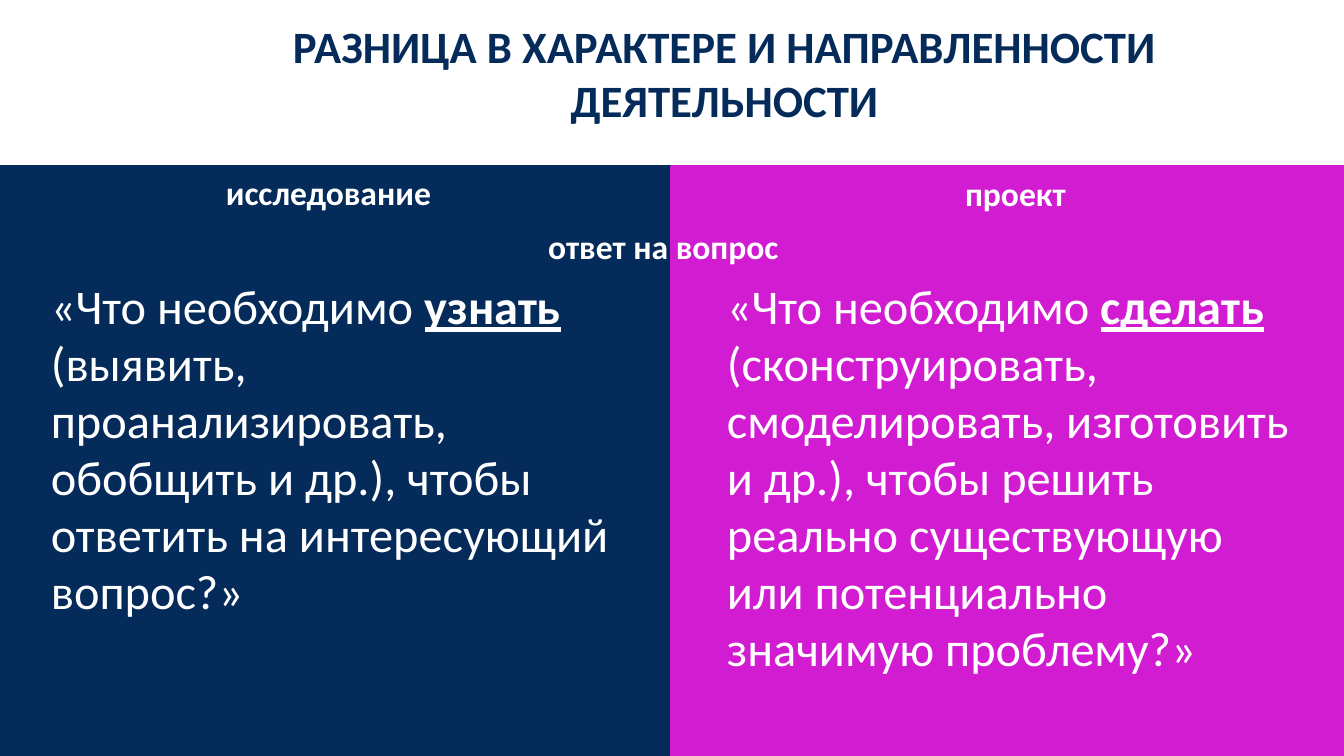
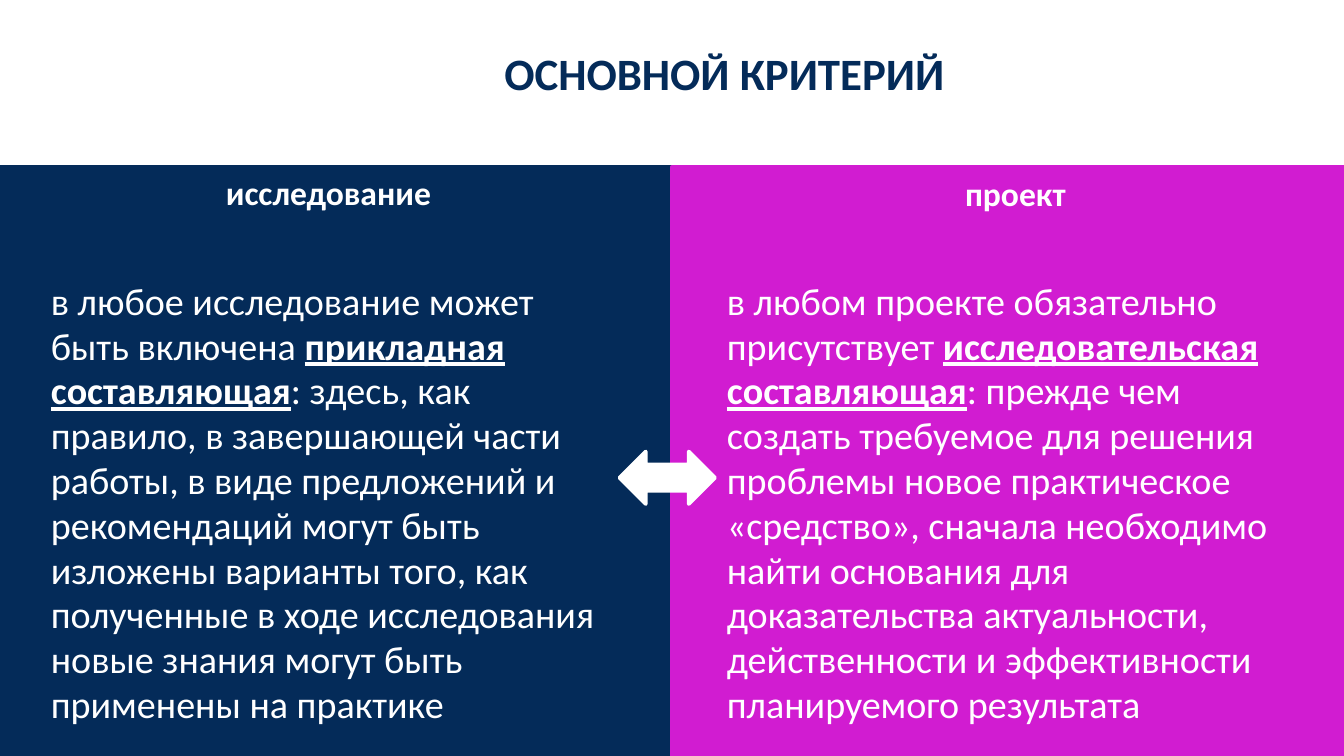
from dataclasses import dataclass
from typing import Optional

from pptx import Presentation
from pptx.dml.color import RGBColor
from pptx.enum import shapes as kinds, text as modes
from pptx.util import Inches, Pt


@dataclass(frozen=True)
class Theme:
    font: str = "Calibri"
    navy: str = "042B59"
    pink: str = "D11CD1"
    white: str = "FFFFFF"
    title: float = 24
    label: float = 18
    edge: float = 2


@dataclass(frozen=True)
class Box:
    left: float
    top: float
    width: float
    height: float

    def lengths(self) -> list:
        return [Inches(n) for n in (self.left, self.top, self.width, self.height)]


@dataclass(frozen=True)
class Side:
    name: str
    color: str
    panel: Box
    head: Box
    left: float


@dataclass(frozen=True)
class Claim:
    """Body text around one stressed phrase."""
    before: str
    stress: str
    after: str


@dataclass(frozen=True)
class Page:
    title: str
    size: float
    height: float
    claims: tuple
    link: Optional[str] = None


THEME = Theme()
TITLE = Box(1.06, 0.23, 8.66, 0.62)
LINK = Box(3.98, 1.63, 1.99, 0.4)
ARROW = Box(4.61, 3.36, 0.71, 0.39)
BODY_TOP, BODY_WIDTH = 2.03, 4.42
SPACING = 0.98

SIDES = (
    Side("исследование", THEME.navy, Box(0, 1.24, 5, 4.39), Box(0.28, 1.23, 4.33, 0.4), 0.28),
    Side("проект", THEME.pink, Box(5, 1.24, 5, 4.39), Box(5.39, 1.24, 4.33, 0.4), 5.31),
)

PAGES = (
    Page("РАЗНИЦА В ХАРАКТЕРЕ И НАПРАВЛЕННОСТИ ДЕЯТЕЛЬНОСТИ", 25.9, 3.39, (
        Claim("«Что необходимо ", "узнать",
              " (выявить, проанализировать, обобщить и др.), чтобы ответить на "
              "интересующий вопрос?»"),
        Claim("«Что необходимо ", "сделать",
              " (сконструировать, смоделировать, изготовить и др.), чтобы решить "
              "реально существующую или потенциально значимую проблему?»"),
    ), link="ответ на вопрос"),
    Page("ОСНОВНОЙ КРИТЕРИЙ", 20.4, 3.15, (
        Claim("в любое исследование может быть включена ", "прикладная составляющая",
              ": здесь, как правило, в завершающей части работы, в виде предложений и "
              "рекомендаций могут быть изложены варианты того, как полученные в ходе "
              "исследования новые знания могут быть применены на практике"),
        Claim("в любом проекте обязательно присутствует ", "исследовательская составляющая",
              ": прежде чем создать требуемое для решения проблемы новое практическое "
              "«средство», сначала необходимо найти основания для доказательства "
              "актуальности, действенности и эффективности планируемого результата"),
    )),
)


def apply(target, **values) -> None:
    for name, value in values.items():
        setattr(target, name, value)


def add_run(para, words: str, size: float, color: str, **style) -> None:
    run = para.add_run()
    run.text = words
    apply(run.font, name=THEME.font, size=Pt(size), **style)
    run.font.color.rgb = RGBColor.from_string(color)


def add_block(slide, kind, box: Box, color: str) -> None:
    block = slide.shapes.add_shape(kind, *box.lengths())
    block.shadow.inherit = False
    block.fill.solid()
    block.line.width = Pt(THEME.edge)
    for paint in (block.fill.fore_color, block.line.color):
        paint.rgb = RGBColor.from_string(color)


def add_title(slide, words: str) -> None:
    title = slide.shapes.title
    apply(title, **dict(zip(("left", "top", "width", "height"), TITLE.lengths())))
    apply(title.text_frame, word_wrap=True, auto_size=modes.MSO_AUTO_SIZE.NONE,
          vertical_anchor=modes.MSO_ANCHOR.MIDDLE)
    para = title.text_frame.paragraphs[0]
    para.alignment = modes.PP_ALIGN.CENTER
    add_run(para, words, THEME.title, THEME.navy, bold=True)


def add_text(slide, box: Box, wrap: bool = True):
    """Add an empty text box and return its first paragraph."""
    frame = slide.shapes.add_textbox(*box.lengths()).text_frame
    frame.word_wrap = wrap
    return frame.paragraphs[0]


def add_label(slide, box: Box, words: str, wrap: bool = True) -> None:
    para = add_text(slide, box, wrap)
    para.alignment = modes.PP_ALIGN.CENTER if wrap else modes.PP_ALIGN.LEFT
    add_run(para, words, THEME.label, THEME.white, bold=True)


def add_claim(slide, box: Box, claim: Claim, size: float) -> None:
    para = add_text(slide, box)
    para.line_spacing = SPACING
    add_run(para, claim.before, size, THEME.white)
    add_run(para, claim.stress, size, THEME.white, bold=True, underline=True)
    add_run(para, claim.after, size, THEME.white)


def add_page(deck, page: Page) -> None:
    slide = deck.slides.add_slide(deck.slide_layouts.get_by_name("Title Only"))
    add_title(slide, page.title)
    for side in SIDES:
        add_block(slide, kinds.MSO_SHAPE.RECTANGLE, side.panel, side.color)
    for side, claim in zip(SIDES, page.claims):
        body = Box(side.left, BODY_TOP, BODY_WIDTH, page.height)
        add_claim(slide, body, claim, page.size)
    for side in SIDES:
        add_label(slide, side.head, side.name)
    if page.link:
        add_label(slide, LINK, page.link, wrap=False)
    else:
        add_block(slide, kinds.MSO_SHAPE.LEFT_RIGHT_ARROW, ARROW, THEME.white)


def main() -> None:
    deck = Presentation()
    deck.slide_width = Inches(10)
    deck.slide_height = deck.slide_width * 9 // 16
    for page in PAGES:
        add_page(deck, page)
    deck.save("out.pptx")


if __name__ == "__main__":
    main()
